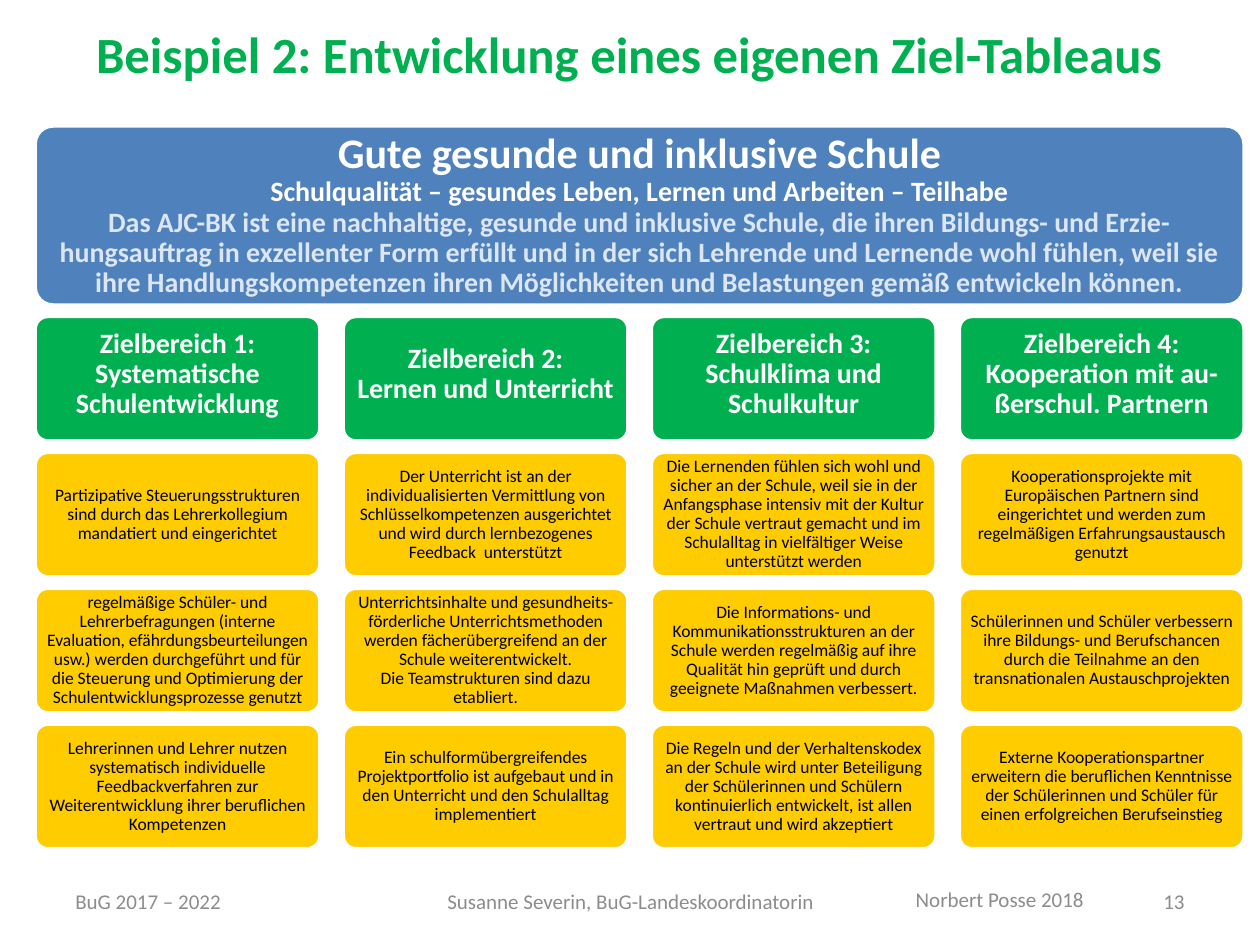
from copy import deepcopy
from pptx import Presentation
from pptx.dml.color import RGBColor
from pptx.enum.shapes import MSO_SHAPE as Kind
from pptx.enum.text import MSO_ANCHOR as Anchor, PP_ALIGN as Align
from pptx.util import Cm, Pt

WHITE = RGBColor(0xFF, 0xFF, 0xFF)
BLACK = RGBColor(0x00, 0x00, 0x00)
GREY = RGBColor(0x8C, 0x8C, 0x8C)
GREEN = RGBColor(0x00, 0xB0, 0x50)
BLUE = RGBColor(0x4F, 0x81, 0xBD)
PALE = RGBColor(0xDC, 0xE6, 0xF2)
GOLD = RGBColor(0xFF, 0xCC, 0x00)


def write(frame, text, size=10, color=BLACK, bold=False, align=Align.CENTER,
          anchor=Anchor.MIDDLE, pad=(0.25, 0.13), space=None):
    """Append text to the frame's paragraph; each newline is a line break."""
    frame.word_wrap = True
    frame.vertical_anchor = anchor
    frame.margin_left = frame.margin_right = Cm(pad[0])
    frame.margin_top = frame.margin_bottom = Cm(pad[1])
    para = frame.paragraphs[0]
    para.alignment = align
    para.line_spacing = space
    for num, line in enumerate(text.split("\n")):
        if num:
            para.add_line_break()
            para._p[-1].append(deepcopy(run._r.rPr))
        if line:
            run = para.add_run()
            run.text = line
            font = run.font
            font.name, font.size, font.bold = "Calibri", Pt(size), bold
            font.color.rgb = color


def panel(left, top, width, height, fill):
    """Add a rounded panel and return its text frame."""
    box = slide.shapes.add_shape(Kind.ROUNDED_RECTANGLE, Cm(left), Cm(top),
                                 Cm(width), Cm(height))
    box.adjustments[0] = 0.1
    box.shadow.inherit = False
    box.fill.solid()
    box.fill.fore_color.rgb = fill
    box.line.color.rgb = WHITE
    box.line.width = Pt(2)
    return box.text_frame


deck = Presentation()
deck.slide_width, deck.slide_height = Cm(25.4), Cm(19.05)
slide = deck.slides.add_slide(deck.slide_layouts[6])

# Title and footer
labels = [
    ("Beispiel 2: Entwicklung eines eigenen Ziel-Tableaus",
     (0, 0.33, 25.4, 1.5), dict(size=29, color=GREEN, bold=True, anchor=Anchor.TOP)),
    ("BuG 2017 – 2022", (1.27, 17.65, 5.92, 1.02), dict(align=Align.LEFT)),
    ("Susanne Severin, BuG-Landeskoordinatorin", (8.69, 17.65, 8.05, 1.02), {}),
    ("Norbert Posse 2018", (17.73, 17.75, 4.37, 0.99),
     dict(align=Align.RIGHT, anchor=Anchor.TOP)),
    ("13", (18.21, 17.65, 5.92, 1.02), dict(align=Align.RIGHT)),
]
for text, place, look in labels:
    label = slide.shapes.add_textbox(*map(Cm, place))
    write(label.text_frame, text, **{"size": 12, "color": GREY, **look})

# Grid measures in cm
LEFT, TOP = 0.71, 6.38
WIDE, HIGH = 5.74, 2.51
STEP, DROP = 6.21, 2.74

# Guiding vision across all columns
vision = panel(LEFT, 2.54, 3 * STEP + WIDE, 3.61, BLUE)
for text, size, color in [
    ("Gute gesunde und inklusive Schule\n", 24, WHITE),
    ("Schulqualität – gesundes Leben, Lernen und Arbeiten – Teilhabe\n", 16, WHITE),
    ("Das AJC-BK ist eine nachhaltige, gesunde und inklusive Schule, die ihren "
     "Bildungs- und Erzie-hungsauftrag in exzellenter Form erfüllt und in der sich "
     "Lehrende und Lernende wohl fühlen, weil sie ihre Handlungskompetenzen ihren "
     "Möglichkeiten und Belastungen gemäß entwickeln können.", 16, PALE),
]:
    write(vision, text, size=size, color=color, bold=True, pad=(0.25, 0.25), space=0.9)

# Target areas: heading, heading padding, goals
areas = [
    ("Zielbereich 1:\nSystematische Schulentwicklung", (0, 0.18), [
        "Partizipative Steuerungsstrukturen sind durch das Lehrerkollegium mandatiert "
        "und eingerichtet",
        "regelmäßige Schüler- und Lehrerbefragungen (interne Evaluation, "
        "efährdungsbeurteilungen usw.) werden durchgeführt und für die Steuerung und "
        "Optimierung der Schulentwicklungsprozesse genutzt",
        "Lehrerinnen und Lehrer nutzen systematisch individuelle Feedbackverfahren zur "
        "Weiterentwicklung ihrer beruflichen Kompetenzen"]),
    ("Zielbereich 2:\nLernen und Unterricht", (0.08, 0.48), [
        "Der Unterricht ist an der individualisierten Vermittlung von "
        "Schlüsselkompetenzen ausgerichtet und wird durch lernbezogenes Feedback  "
        "unterstützt",
        "Unterrichtsinhalte und gesundheits-förderliche Unterrichtsmethoden werden "
        "fächerübergreifend an der Schule weiterentwickelt.\n"
        "Die Teamstrukturen sind dazu etabliert.",
        "Ein schulformübergreifendes Projektportfolio ist aufgebaut und in den "
        "Unterricht und den Schulalltag implementiert"]),
    ("Zielbereich 3:\nSchulklima und Schulkultur", (0.18, 0.18), [
        "Die Lernenden fühlen sich wohl und sicher an der Schule, weil sie in der "
        "Anfangsphase intensiv mit der Kultur der Schule vertraut gemacht und im "
        "Schulalltag in vielfältiger Weise unterstützt werden",
        "Die Informations- und Kommunikationsstrukturen an der Schule werden regelmäßig "
        "auf ihre Qualität hin geprüft und durch geeignete Maßnahmen verbessert.",
        "Die Regeln und der Verhaltenskodex an der Schule wird unter Beteiligung der "
        "Schülerinnen und Schülern kontinuierlich entwickelt, ist allen vertraut und "
        "wird akzeptiert"]),
    ("Zielbereich 4:\nKooperation mit au-ßerschul. Partnern", (0.18, 0.18), [
        "Kooperationsprojekte mit Europäischen Partnern sind eingerichtet und werden "
        "zum regelmäßigen Erfahrungsaustausch genutzt",
        "Schülerinnen und Schüler verbessern ihre Bildungs- und Berufschancen durch die "
        "Teilnahme an den transnationalen Austauschprojekten",
        "Externe Kooperationspartner erweitern die beruflichen Kenntnisse der "
        "Schülerinnen und Schüler für einen erfolgreichen Berufseinstieg"]),
]
for col, (head, pad, goals) in enumerate(areas):
    left = LEFT + col * STEP
    write(panel(left, TOP, WIDE, HIGH, GREEN), head, size=16, color=WHITE,
          bold=True, anchor=Anchor.TOP, pad=pad, space=0.9)
    for row, goal in enumerate(goals, 1):
        write(panel(left, TOP + row * DROP, WIDE, HIGH, GOLD), goal,
              pad=(0.1, 0.1), space=0.9)

deck.save("out.pptx")
